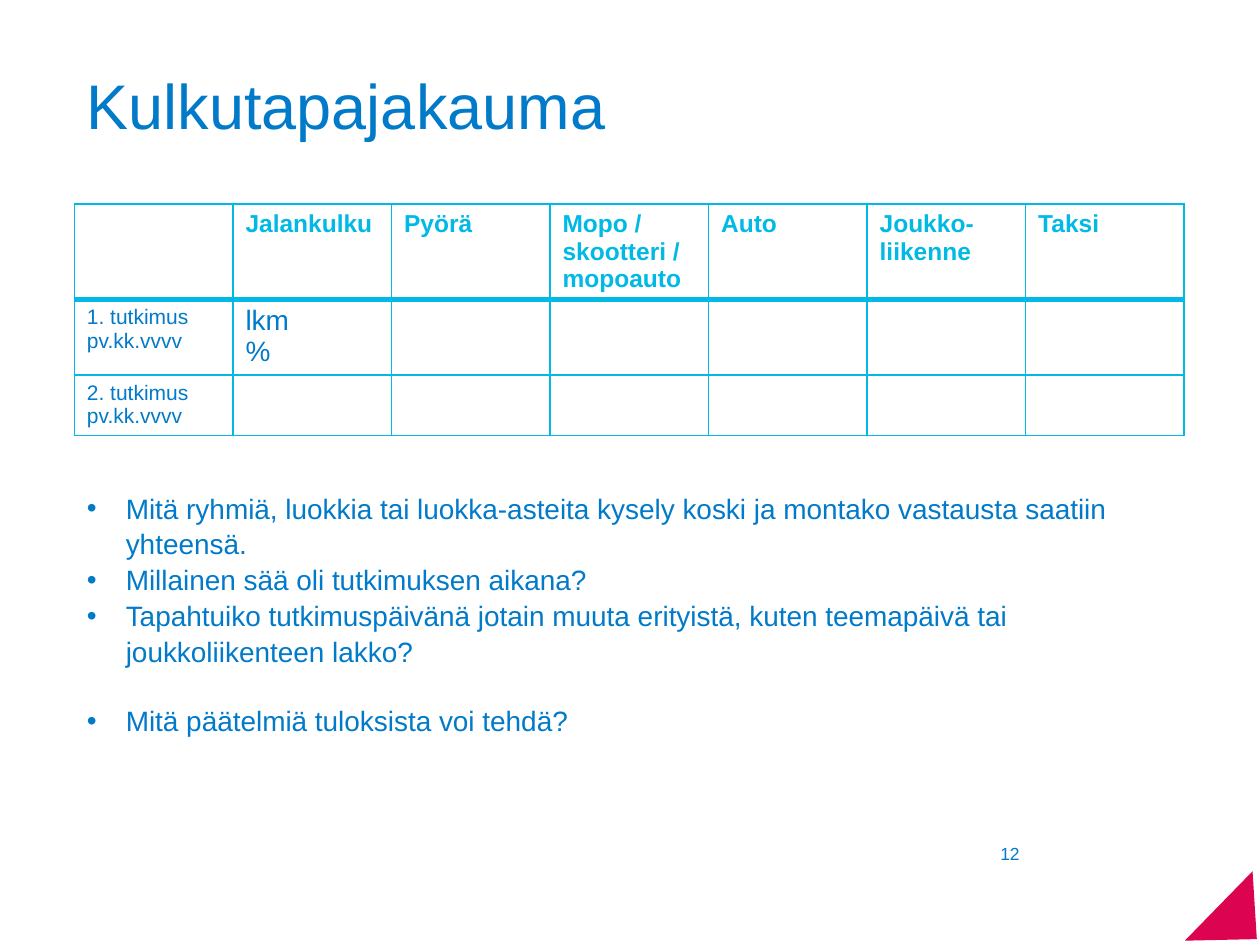
from lxml.etree import SubElement
from pptx import Presentation
from pptx.dml.color import RGBColor
from pptx.enum.shapes import MSO_SHAPE as Shape
from pptx.enum.text import MSO_ANCHOR as Anchor, MSO_AUTO_SIZE as Fit, PP_ALIGN as Align
from pptx.oxml import parse_xml
from pptx.oxml.ns import nsdecls, qn
from pptx.util import Inches, Pt

BLUE = RGBColor(0x00, 0x7A, 0xC9)
CYAN = RGBColor(0x00, 0xB9, 0xE4)
RED = RGBColor(0xDC, 0x04, 0x51)
FONT = "Arial"

HEADS = ["", "Jalankulku", "Pyörä", "Mopo / skootteri / mopoauto",
         "Auto", "Joukko-liikenne", "Taksi"]
ROWS = [HEADS,
        ["1. tutkimus\npv.kk.vvvv", "lkm\n%"] + [""] * 5,
        ["2. tutkimus\npv.kk.vvvv"] + [""] * 6]
HEIGHTS = [0.75, 0.6, 0.48]
POINTS = [
    "Mitä ryhmiä, luokkia tai luokka-asteita kysely koski ja montako vastausta saatiin yhteensä.",
    "Millainen sää oli tutkimuksen aikana?",
    "Tapahtuiko tutkimuspäivänä jotain muuta erityistä, kuten teemapäivä tai joukkoliikenteen lakko?",
    "Mitä päätelmiä tuloksista voi tehdä?",
]


class Page:
    def __init__(self, deck):
        self.slide = deck.slides.add_slide(deck.slide_layouts[5])
        self.shapes = self.slide.shapes

    def text(self, para, words, size, color=BLUE, bold=False):
        run = para.add_run()
        run.text = words
        font = run.font
        font.name, font.size, font.bold = FONT, Pt(size), bold
        font.color.rgb = color

    def title(self, words, *box):
        head = self.shapes.title
        head.left, head.top, head.width, head.height = map(Inches, box)
        frame = head.text_frame
        frame.vertical_anchor = Anchor.MIDDLE
        para = frame.paragraphs[0]
        para.alignment = Align.LEFT
        para.line_spacing = 0.9
        self.text(para, words, 36)

    def frame(self, *box):
        frame = self.shapes.add_textbox(*map(Inches, box)).text_frame
        frame.word_wrap = True
        return frame

    def label(self, words, size, *box):
        para = self.frame(*box).paragraphs[0]
        para.line_spacing = 0.9
        self.text(para, words, size)

    def bullets(self, items, size, *box):
        frame = self.frame(*box)
        frame.auto_size = Fit.SHAPE_TO_FIT_TEXT
        for i, item in enumerate(items):
            para = frame.paragraphs[0] if i == 0 else frame.add_paragraph()
            para.line_spacing = 1.07
            if i == len(items) - 1:
                para.space_before = Pt(19)
            props = para._p.get_or_add_pPr()
            props.set("marL", str(Inches(0.31)))
            props.set("indent", str(Inches(-0.31)))
            SubElement(props, qn("a:buFont")).set("typeface", FONT)
            SubElement(props, qn("a:buChar")).set("char", "•")
            self.text(para, item, size)

    def border(self, cell, **widths):
        """Draw the cell's sides, each named L, R, T or B with its width in points."""
        props = cell._tc.get_or_add_tcPr()
        for i, (side, width) in enumerate(widths.items()):
            props.insert(i, parse_xml(
                f'<a:ln{side} {nsdecls("a")} w="{Pt(width)}"><a:solidFill>'
                f'<a:srgbClr val="{CYAN}"/></a:solidFill></a:ln{side}>'))

    def table(self, rows, heights, left, top, width):
        box = map(Inches, (left, top, width, sum(heights)))
        grid = self.shapes.add_table(len(rows), len(rows[0]), *box).table
        for r, texts in enumerate(rows):
            grid.rows[r].height = Inches(heights[r])
            for c, words in enumerate(texts):
                cell = grid.cell(r, c)
                cell.fill.background()
                self.border(cell, L=1, R=1, T=3 if r == 1 else 1, B=3 if r == 0 else 1)
                if not words:
                    continue
                frame = cell.text_frame
                for i, line in enumerate(words.split("\n")):
                    para = frame.paragraphs[0] if i == 0 else frame.add_paragraph()
                    if r == 0:
                        self.text(para, line, 14, CYAN, True)
                    else:
                        self.text(para, line, 12 if c == 0 else 16)

    def corner(self, color, turn, peak, *box):
        shape = self.shapes.add_shape(Shape.ISOSCELES_TRIANGLE, *map(Inches, box))
        shape.adjustments[0] = peak
        shape.rotation = turn
        shape.shadow.inherit = False
        shape.fill.solid()
        shape.fill.fore_color.rgb = color
        shape.line.fill.background()


def main():
    deck = Presentation()
    deck.slide_width, deck.slide_height = Inches(10), Inches(7.5)
    page = Page(deck)
    page.title("Kulkutapajakauma", 0.59, 0.28, 8.81, 1.18)
    page.table(ROWS, HEIGHTS, 0.59, 1.62, 8.81)
    page.bullets(POINTS, 16, 0.59, 3.83, 8.82, 2.32)
    page.label("12", 10, 7.84, 6.66, 0.55, 0.23)
    page.corner(RED, 134.3, 0.47, 9.43, 7.13, 0.77, 0.4)
    deck.save("out.pptx")


if __name__ == "__main__":
    main()
